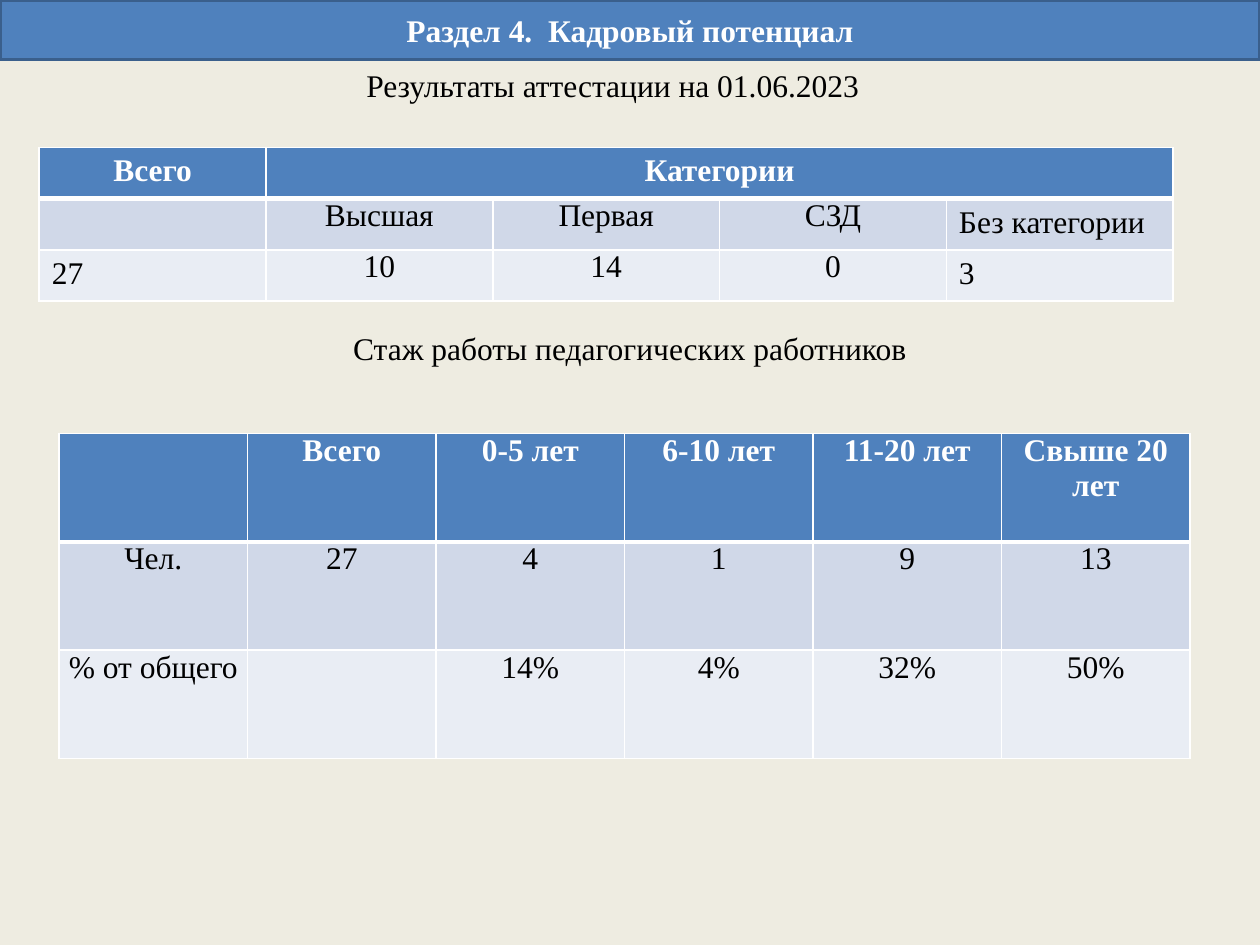
import dataclasses

import pptx
import pptx.dml.color
import pptx.enum.shapes
import pptx.enum.text
import pptx.oxml
import pptx.oxml.ns
import pptx.util

Cm = pptx.util.Cm
Pt = pptx.util.Pt
CENTER = pptx.enum.text.PP_ALIGN.CENTER
LEFT = pptx.enum.text.PP_ALIGN.LEFT
TOP = pptx.enum.text.MSO_ANCHOR.TOP
MIDDLE = pptx.enum.text.MSO_ANCHOR.MIDDLE


@dataclasses.dataclass(frozen=True)
class Theme:
    """Colours and type of the slide."""

    font: str = "Times New Roman"
    size: int = 18
    background: str = "EEECE1"
    accent: str = "4F81BD"
    accent_line: str = "3A5F8C"
    bands: tuple = ("D0D8E8", "E9EDF4")
    light: str = "FFFFFF"
    dark: str = "000000"


THEME = Theme()


def rgb(value):
    """Turn a hex string into a colour."""
    return pptx.dml.color.RGBColor.from_string(value)


def write(text_frame, text, color, bold=False, alignment=CENTER):
    """Write one styled run into the first paragraph."""
    paragraph = text_frame.paragraphs[0]
    paragraph.alignment = alignment
    run = paragraph.add_run()
    run.text = text
    run.font.name = THEME.font
    run.font.size = Pt(THEME.size)
    run.font.bold = bold
    run.font.color.rgb = rgb(color)


def add_banner(slide, left, top, width, height, text):
    """Add the section banner."""
    shape = slide.shapes.add_shape(
        pptx.enum.shapes.MSO_SHAPE.RECTANGLE, Cm(left), Cm(top), Cm(width), Cm(height)
    )
    shape.shadow.inherit = False
    shape.fill.solid()
    shape.fill.fore_color.rgb = rgb(THEME.accent)
    shape.line.color.rgb = rgb(THEME.accent_line)
    shape.line.width = Pt(2)
    shape.text_frame.vertical_anchor = MIDDLE
    write(shape.text_frame, text, THEME.light, bold=True)


def add_caption(slide, left, top, width, height, text, anchor):
    """Add a centred caption above a table."""
    shape = slide.shapes.add_textbox(Cm(left), Cm(top), Cm(width), Cm(height))
    shape.text_frame.word_wrap = True
    shape.text_frame.vertical_anchor = anchor
    write(shape.text_frame, text, THEME.dark)


def style_cell(cell, row_index):
    """Give a cell its borders and fill."""
    properties = cell._tc.get_or_add_tcPr()
    widths = {
        "lnL": 1,
        "lnR": 1,
        "lnT": 3 if row_index == 1 else 1,
        "lnB": 3 if row_index == 0 else 1,
    }
    for tag, width in widths.items():
        properties.append(pptx.oxml.parse_xml(
            f'<a:{tag} {pptx.oxml.ns.nsdecls("a")} w="{Pt(width)}">'
            f'<a:solidFill><a:srgbClr val="{THEME.light}"/></a:solidFill></a:{tag}>'
        ))
    cell.fill.solid()
    fill = THEME.accent if row_index == 0 else THEME.bands[(row_index - 1) % 2]
    cell.fill.fore_color.rgb = rgb(fill)


def add_data_table(slide, left, top, width, height, rows, padded_header=False, left_columns=()):
    """Add a banded table; None in a row extends the cell to its left."""
    row_count, column_count = len(rows), len(rows[0])
    table = slide.shapes.add_table(
        row_count, column_count, Cm(left), Cm(top), Cm(width), Cm(height)
    ).table
    for column in table.columns:
        column.width = Cm(width / column_count)
    for row in table.rows:
        row.height = Cm(height / row_count)
    for row_index, texts in enumerate(rows):
        is_header = row_index == 0
        for column_index, text in enumerate(texts):
            cell = table.cell(row_index, column_index)
            style_cell(cell, row_index)
            if text is None:
                origin = max(i for i in range(column_index) if texts[i] is not None)
                if column_index + 1 == column_count or texts[column_index + 1] is not None:
                    table.cell(row_index, origin).merge(cell)
                continue
            if not text:
                continue
            is_left = not is_header and column_index in left_columns
            if not (is_left or is_header and padded_header):
                cell.margin_left = cell.margin_right = Cm(0.17)
                cell.margin_top = cell.margin_bottom = 0
            color = THEME.light if is_header else THEME.dark
            write(cell.text_frame, text, color, is_header, LEFT if is_left else CENTER)


def main():
    """Build the staff slide and save it."""
    presentation = pptx.Presentation()
    presentation.slide_width = Cm(25.4)
    presentation.slide_height = Cm(19.05)
    slide = presentation.slides.add_slide(presentation.slide_layouts[6])
    slide.background.fill.solid()
    slide.background.fill.fore_color.rgb = rgb(THEME.background)

    add_banner(slide, 0, 0, 25.4, 1.2, "Раздел 4.  Кадровый потенциал")
    add_data_table(
        slide, 0.79, 2.97, 22.86, 3.1,
        [
            ["Всего", "Категории", None, None, None],
            ["", "Высшая", "Первая", "СЗД", "Без категории"],
            ["27", "10", "14", "0", "3"],
        ],
        padded_header=True,
        left_columns=(0, 4),
    )
    add_caption(slide, 0.58, 1.2, 23.55, 1.6, "Результаты аттестации на 01.06.2023", TOP)
    add_caption(slide, 0, 6.5, 25.4, 1.03, "Стаж работы педагогических работников", MIDDLE)
    add_data_table(
        slide, 1.19, 8.74, 22.8, 6.55,
        [
            ["", "Всего", "0-5 лет", "6-10 лет", "11-20 лет", "Свыше 20 лет"],
            ["Чел.", "27", "4", "1", "9", "13"],
            ["% от общего", "", "14%", "4%", "32%", "50%"],
        ],
    )
    presentation.save("out.pptx")


if __name__ == "__main__":
    main()
